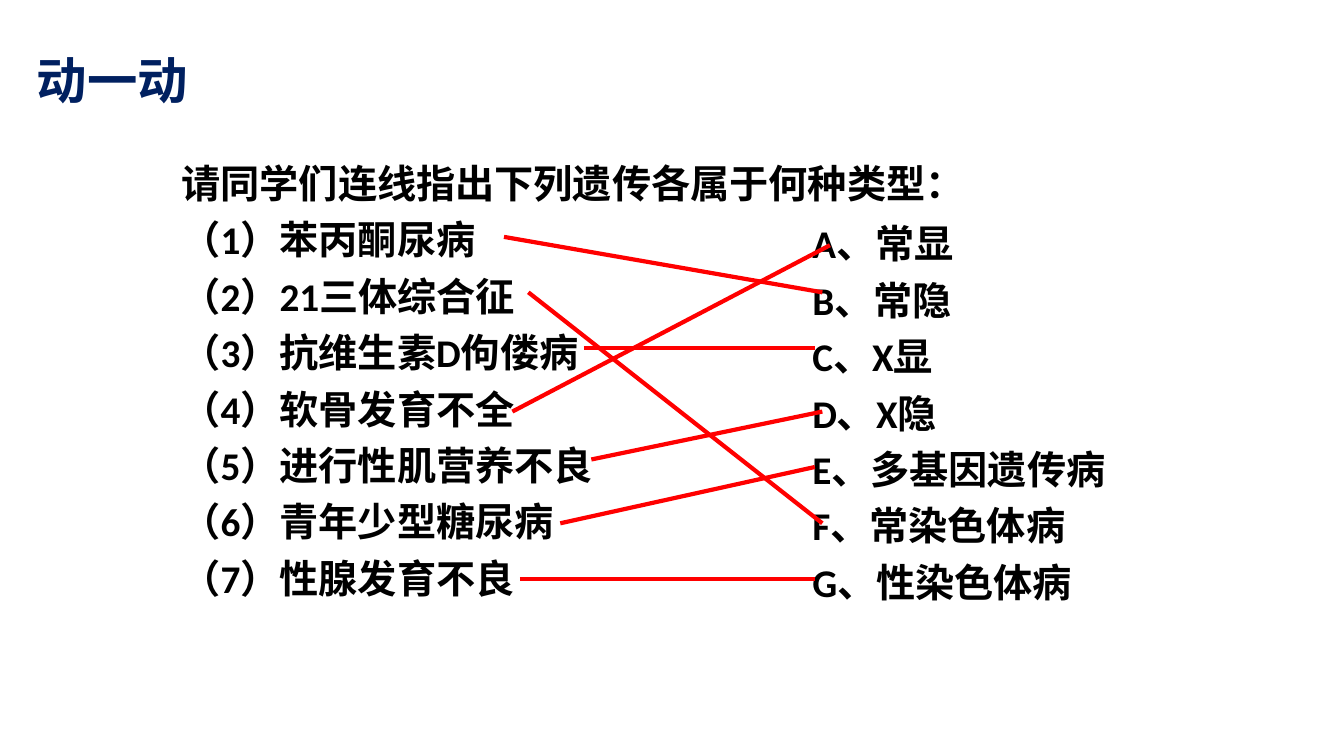
"""Build the matching exercise on types of inherited disease."""
from dataclasses import dataclass

from lxml.etree import SubElement
from pptx import Presentation
from pptx.dml.color import RGBColor
from pptx.enum.shapes import MSO_CONNECTOR
from pptx.enum.text import MSO_ANCHOR, MSO_AUTO_SIZE, PP_ALIGN
from pptx.oxml.ns import qn
from pptx.util import Inches, Pt

COLUMNS, ROWS = 160, 90
CHINESE_FONT = "Noto Sans CJK SC"
DISEASES = ["苯丙酮尿病", "21三体综合征", "抗维生素D佝偻病", "软骨发育不全",
            "进行性肌营养不良", "青年少型糖尿病", "性腺发育不良"]
TYPES = ["常显", "常隐", "X显", "X隐", "多基因遗传病", "常染色体病", "性染色体病"]


@dataclass(frozen=True)
class TextBlock:
    """Lines of text with one format, placed in grid units."""
    lines: list[str]
    column: float
    row: float
    columns: float
    rows: float
    size: int = 28
    font: str = "Calibri"
    color: str = "000000"
    spacing: float = 1.2


@dataclass(frozen=True)
class Match:
    """A line from a disease to its type, in grid units."""
    column: float
    row: float
    end_column: float
    end_row: float


BLOCKS = [
    TextBlock(["动一动"], 3.2, 5.3, 25.3, 8.5, 36, CHINESE_FONT, "002060", 1.0),
    TextBlock(["请同学们连线指出下列遗传各属于何种类型："]
              + [f"（{number}）{name}" for number, name in enumerate(DISEASES, 1)],
              20.4, 17.2, 96.7, 55.6),
    TextBlock([f"{letter}、{name}" for letter, name in zip("ABCDEFG", TYPES)],
              95.5, 24.4, 39.2, 48.4),
]
MATCHES = [
    Match(60, 28.2, 97.9, 34.8),
    Match(62.9, 34.8, 97.9, 62.3),
    Match(69.5, 41.4, 97, 41.4),
    Match(61, 49, 98.8, 29.2),
    Match(70.4, 54.7, 97.9, 49),
    Match(66.7, 62.3, 97, 55.6),
    Match(61.9, 68.9, 97, 68.9),
]


def rgb(color: str) -> RGBColor:
    """Turn a hex string into a colour."""
    return RGBColor.from_string(color)


def across(deck, columns: float) -> int:
    """Convert grid columns to a length."""
    return round(deck.slide_width * columns / COLUMNS)


def down(deck, rows: float) -> int:
    """Convert grid rows to a length."""
    return round(deck.slide_height * rows / ROWS)


def format_paragraph(para, block: TextBlock) -> None:
    """Apply the block's font and spacing, without a bullet."""
    para.alignment = PP_ALIGN.LEFT
    para.line_spacing = block.spacing
    para.space_before = para.space_after = Pt(0)
    font = para.font
    font.size, font.name, font.bold = Pt(block.size), block.font, True
    font.color.rgb = rgb(block.color)
    properties = para._p.get_or_add_pPr()
    properties.set("marL", "0")
    properties.set("indent", "0")
    defaults = properties.find(qn("a:defRPr"))
    SubElement(defaults, qn("a:ea")).set("typeface", CHINESE_FONT)
    defaults.addprevious(properties.makeelement(qn("a:buNone"), {}))


def fill_placeholder(deck, box, block: TextBlock) -> None:
    """Move a placeholder and write the block's lines in it."""
    box.left, box.top = across(deck, block.column), down(deck, block.row)
    box.width, box.height = across(deck, block.columns), down(deck, block.rows)
    frame = box.text_frame
    frame.word_wrap = True
    frame.auto_size = MSO_AUTO_SIZE.NONE
    frame.vertical_anchor = MSO_ANCHOR.TOP
    frame.text = "\n".join(block.lines)
    for para in frame.paragraphs:
        format_paragraph(para, block)


def draw_match(deck, page, match: Match) -> None:
    """Draw one red answer line."""
    line = page.shapes.add_connector(
        MSO_CONNECTOR.STRAIGHT,
        across(deck, match.column), down(deck, match.row),
        across(deck, match.end_column), down(deck, match.end_row))
    line.line.color.rgb = rgb("FF0000")
    line.line.width = Pt(3)
    SubElement(line._element.spPr, qn("a:effectLst"))


def main() -> None:
    """Build and save the slide."""
    deck = Presentation()
    deck.slide_width, deck.slide_height = Inches(13.33), Inches(7.5)
    page = deck.slides.add_slide(deck.slide_layouts.get_by_name("Two Content"))
    title, diseases, types = list(page.placeholders)[:3]
    for box, block in zip((title, diseases, types), BLOCKS):
        fill_placeholder(deck, box, block)
    diseases.line.color.rgb = rgb("FFFFFF")
    diseases.line.width = Pt(3)
    for match in MATCHES:
        draw_match(deck, page, match)
    deck.save("out.pptx")


if __name__ == "__main__":
    main()
